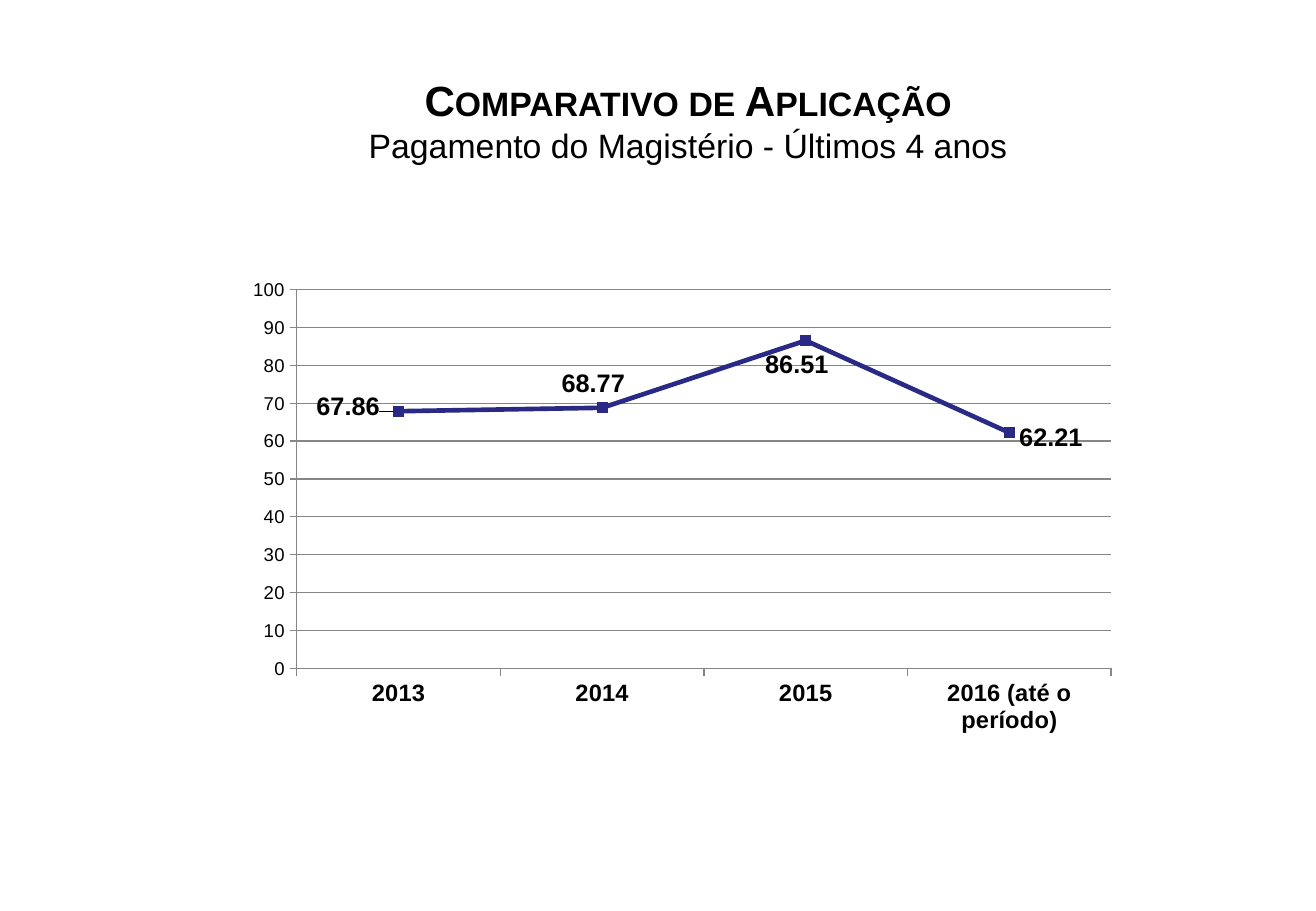
import pptx
import pptx.util
import pptx.chart.data
import pptx.dml.color
import pptx.enum.chart
import pptx.enum.text
import pptx.oxml

WIDTH, HEIGHT = 10.83, 7.5
FONT, BLACK, GRAY, NAVY = "Arial", "000000", "868686", "2A2A86"
C_NS = 'xmlns:c="http://schemas.openxmlformats.org/drawingml/2006/chart"'
POSITION = pptx.enum.chart.XL_LABEL_POSITION

# Year, percentage, label side, label shift as shares of the chart
RESULTS = [
    ("2013", 67.86, POSITION.LEFT, -0.01, -0.01),
    ("2014", 68.77, POSITION.ABOVE, -0.01, 0),
    ("2015", 86.51, POSITION.BELOW, -0.01, 0),
    ("2016 (até o período)", 62.21, POSITION.RIGHT, 0, 0.01),
]


def color(hex_value):
    return pptx.dml.color.RGBColor.from_string(hex_value)


def box(left, top, width, height):
    """Turn shares of the slide's size into lengths."""
    return [pptx.util.Inches(share * side) for share, side in
            ((left, WIDTH), (top, HEIGHT), (width, WIDTH), (height, HEIGHT))]


def set_font(font, size, bold=False):
    font.name = FONT
    font.size = pptx.util.Pt(size)
    font.bold = bold
    font.color.rgb = color(BLACK)


def set_line(line, hex_value, width):
    line.color.rgb = color(hex_value)
    line.width = pptx.util.Pt(width)


def manual_layout(x, y, size=None):
    """Return a chart layout: a shift, or an inner plot area with a size."""
    tags = [("x", x), ("y", y)]
    if size:
        tags = ([("layoutTarget", "inner"), ("xMode", "edge"), ("yMode", "edge")]
                + tags + [("w", size[0]), ("h", size[1])])
    body = "".join(f'<c:{tag} val="{value}"/>' for tag, value in tags)
    return pptx.oxml.parse_xml(
        f"<c:layout {C_NS}><c:manualLayout>{body}</c:manualLayout></c:layout>")


def add_title(slide):
    tf = slide.shapes.add_textbox(*box(0.255, 0.048, 0.536, 0.167)).text_frame
    tf.word_wrap = True
    tf.vertical_anchor = pptx.enum.text.MSO_ANCHOR.MIDDLE
    p = tf.paragraphs[0]
    p.alignment = pptx.enum.text.PP_ALIGN.CENTER
    r = p.add_run()
    r.text = "Comparativo de Aplicação"
    set_font(r.font, 25, bold=True)
    r._r.get_or_add_rPr().set("cap", "small")
    p.add_line_break()
    r = p.add_run()
    r.text = "Pagamento do Magistério - Últimos 4 anos"
    set_font(r.font, 20)


def style_axis(axis, size, bold):
    axis.major_tick_mark = pptx.enum.chart.XL_TICK_MARK.OUTSIDE
    axis.minor_tick_mark = pptx.enum.chart.XL_TICK_MARK.NONE
    set_font(axis.tick_labels.font, size, bold)
    set_line(axis.format.line, GRAY, 0.75)


def style_series(series):
    series.smooth = False
    set_line(series.format.line, NAVY, 2.75)
    marker = series.marker
    marker.style = pptx.enum.chart.XL_MARKER_STYLE.SQUARE
    marker.size = 6
    marker.format.fill.solid()
    marker.format.fill.fore_color.rgb = color(NAVY)
    marker.format.line.color.rgb = color(NAVY)
    for i, (_, _, side, dx, dy) in enumerate(RESULTS):
        label = series.points[i].data_label
        set_font(label.font, 15, bold=True)
        label.position = side
    # Shift each label a little from its side of the marker
    for d_lbl, (_, _, _, dx, dy) in zip(
            series._element.xpath("c:dLbls/c:dLbl"), RESULTS):
        d_lbl.insert(1, manual_layout(dx, dy))


def add_line_chart(slide):
    data = pptx.chart.data.CategoryChartData()
    data.categories = [result[0] for result in RESULTS]
    data.add_series("Series 1", [result[1] for result in RESULTS])
    chart = slide.shapes.add_chart(
        pptx.enum.chart.XL_CHART_TYPE.LINE_MARKERS,
        *box(0.178, 0.297, 0.68, 0.52), data).chart
    chart.has_legend = False
    chart.has_title = False
    set_font(chart.font, 18)
    chart.plots[0].vary_by_categories = False

    # Axes and gridlines
    style_axis(chart.category_axis, 14, True)
    axis = chart.value_axis
    style_axis(axis, 11, False)
    axis.minimum_scale, axis.maximum_scale, axis.major_unit = 0, 100, 10
    axis.has_major_gridlines = True
    set_line(axis.major_gridlines.format.line, GRAY, 0.75)

    # Plot area inside the chart
    plot_area = chart._chartSpace.chart.plotArea
    for layout in plot_area.xpath("c:layout"):
        plot_area.remove(layout)
    plot_area.insert(0, manual_layout(0.07, 0.04, (0.91, 0.8)))

    style_series(chart.plots[0].series[0])


def main():
    prs = pptx.Presentation()
    prs.slide_width = pptx.util.Inches(WIDTH)
    prs.slide_height = pptx.util.Inches(HEIGHT)
    slide = prs.slides.add_slide(prs.slide_layouts[6])
    add_title(slide)
    add_line_chart(slide)
    prs.save("out.pptx")


if __name__ == "__main__":
    main()
